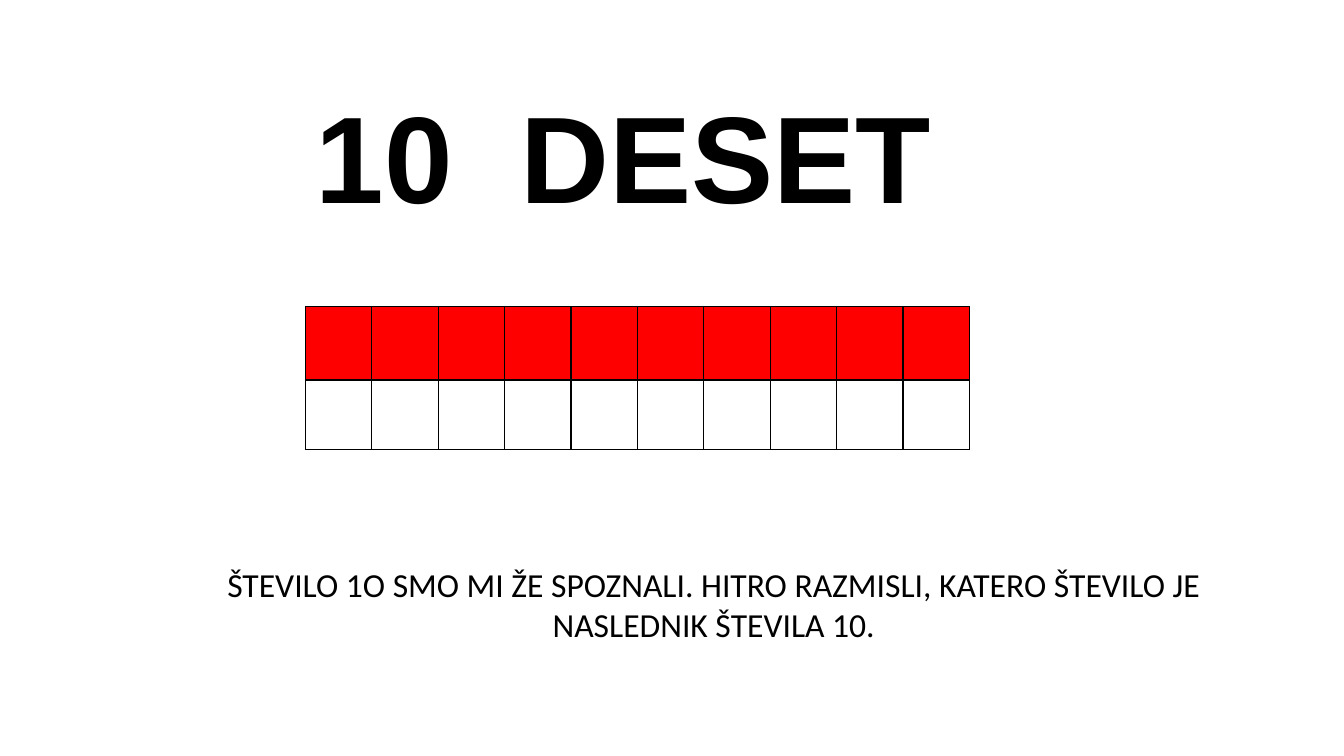
from pptx import Presentation
from pptx.dml.color import RGBColor
from pptx.enum.text import MSO_ANCHOR, MSO_AUTO_SIZE, PP_ALIGN
from pptx.oxml import parse_xml
from pptx.oxml.ns import nsdecls
from pptx.util import Pt

BLACK = RGBColor(0x00, 0x00, 0x00)
RED = RGBColor(0xFF, 0x00, 0x00)
WHITE = RGBColor(0xFF, 0xFF, 0xFF)

COLUMN_COUNT = 10
COLUMN_WIDTH = 47.45
ROWS = [(52.5, RED), (49.7, WHITE)]  # height, fill


def add_text(shape, text, font_name, size, alignment, bold=False):
    frame = shape.text_frame
    frame.word_wrap = True
    frame.auto_size = MSO_AUTO_SIZE.NONE
    frame.vertical_anchor = MSO_ANCHOR.TOP
    paragraph = frame.paragraphs[0]
    paragraph.alignment = alignment
    run = paragraph.add_run()
    run.text = text
    run.font.name = font_name
    run.font.size = Pt(size)
    run.font.bold = bold
    run.font.color.rgb = BLACK


def add_borders(cell):
    properties = cell._tc.get_or_add_tcPr()
    for index, side in enumerate(("lnL", "lnR", "lnT", "lnB")):
        border = parse_xml(
            f'<a:{side} {nsdecls("a")} w="{Pt(1)}"><a:solidFill>'
            f'<a:srgbClr val="{BLACK}"/></a:solidFill></a:{side}>')
        properties.insert(index, border)


presentation = Presentation()
presentation.slide_width = Pt(960)
presentation.slide_height = Pt(540)
slide = presentation.slides.add_slide(presentation.slide_layouts[5])

# Title
title = slide.shapes.title
title.left, title.top, title.width, title.height = Pt(218.2), Pt(54), Pt(503.3), Pt(113.8)
add_text(title, "10  DESET", "Arial", 88, PP_ALIGN.LEFT, bold=True)

# Ten red squares above ten white ones
table_height = sum(height for height, fill in ROWS)
table = slide.shapes.add_table(
    len(ROWS), COLUMN_COUNT, Pt(218.2), Pt(218.9),
    Pt(COLUMN_COUNT * COLUMN_WIDTH), Pt(table_height)).table
for column in table.columns:
    column.width = Pt(COLUMN_WIDTH)
for row, (height, fill) in zip(table.rows, ROWS):
    row.height = Pt(height)
    for cell in row.cells:
        cell.fill.solid()
        cell.fill.fore_color.rgb = fill
        add_borders(cell)

# Question
question = slide.shapes.add_textbox(Pt(118.1), Pt(398.9), Pt(783.4), Pt(65.5))
add_text(question,
         "ŠTEVILO 1O SMO MI ŽE SPOZNALI. HITRO RAZMISLI, KATERO ŠTEVILO JE "
         "NASLEDNIK ŠTEVILA 10.", "Calibri", 24, PP_ALIGN.CENTER)

presentation.save("out.pptx")
